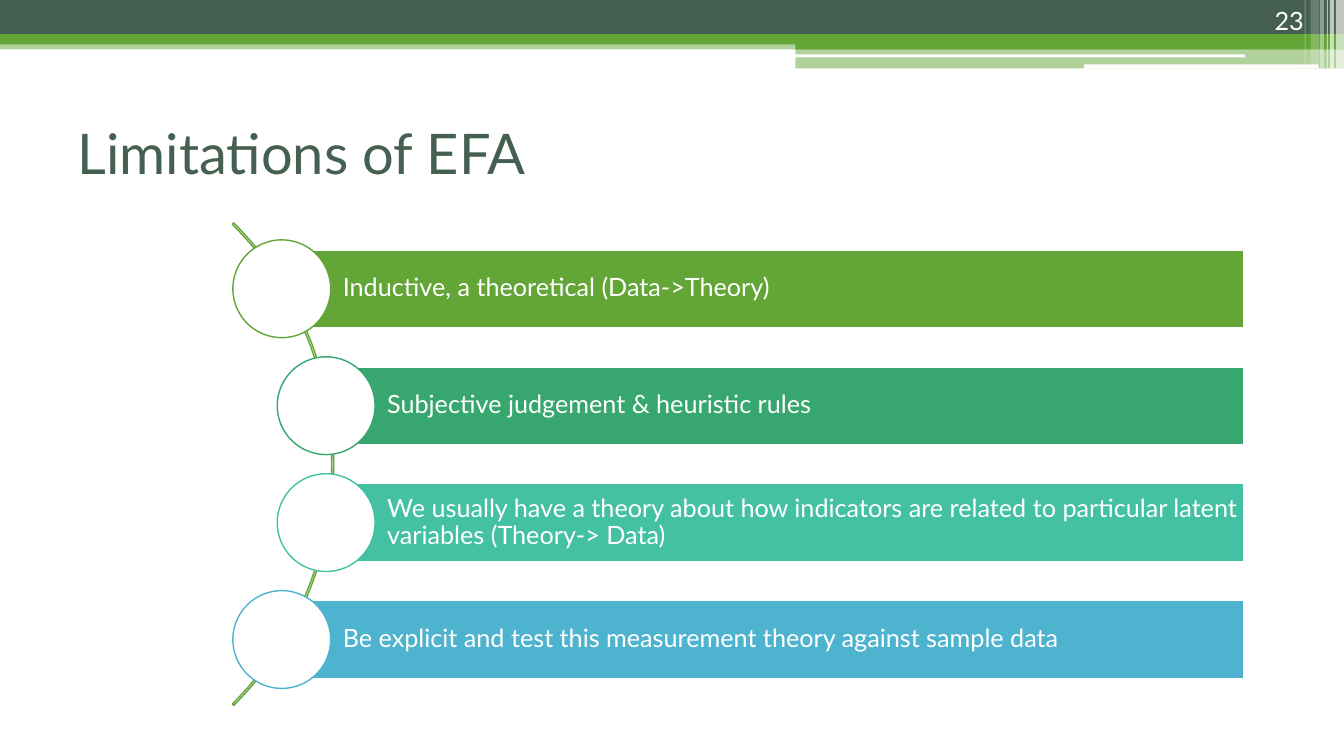
from pptx import Presentation
from pptx.dml.color import RGBColor
from pptx.enum.shapes import MSO_SHAPE
from pptx.enum.text import MSO_ANCHOR, MSO_AUTO_SIZE, PP_ALIGN
from pptx.oxml.ns import qn
from pptx.util import Emu, Pt
from lxml.etree import SubElement

PX = 9144
WHITE = RGBColor(0xFF, 0xFF, 0xFF)
DARK_GREEN = RGBColor(0x45, 0x5F, 0x51)
GREEN = RGBColor(0x63, 0xA5, 0x37)
EMERALD = RGBColor(0x37, 0xA7, 0x6F)
TEAL = RGBColor(0x44, 0xC1, 0xA3)
BLUE = RGBColor(0x4E, 0xB3, 0xCF)

HEADER_BANDS = [
    (0, 40, 1333, 9, GREEN, 50),
    (0, 0, 1333, 34, DARK_GREEN, 100),
    (0, 34, 1333, 10, GREEN, 100),
    (789, 39, 544, 10, GREEN, 100),
    (789, 48, 544, 20, GREEN, 50),
]
HEADER_GAPS = [(788, 54, 447, 3), (1075, 64, 233, 4)]
CORNER_STRIPES = [
    (1325, 8, 68, 65),
    (1319, 4, 68, 65),
    (1316, 1, 68, 60),
    (1309, 4, 68, 40),
    (1300, 8, 64, 20),
    (1294, 1, 64, 30),
]
LIMITATIONS = [
    (279, GREEN, "Inductive, a theoretical (Data->Theory)"),
    (323, EMERALD, "Subjective judgement & heuristic rules"),
    (323, TEAL, "We usually have a theory about how indicators are related "
                "to particular latent variables (Theory-> Data)"),
    (279, BLUE, "Be explicit and test this measurement theory against sample data"),
]
BAR_TOP, BAR_PITCH, BAR_HEIGHT, BAR_RIGHT = 248, 116, 77, 1234
CIRCLE_SIZE = 97


def write_text(frame, text, size=18, color=WHITE, align=PP_ALIGN.LEFT,
               anchor=MSO_ANCHOR.MIDDLE, line_spacing=None, insets=(10, 5, 10, 5)):
    frame.word_wrap = True
    frame.auto_size = MSO_AUTO_SIZE.NONE
    frame.vertical_anchor = anchor
    (frame.margin_left, frame.margin_top,
     frame.margin_right, frame.margin_bottom) = [Emu(inset * PX) for inset in insets]
    paragraph = frame.paragraphs[0]
    paragraph.alignment = align
    if line_spacing:
        paragraph.line_spacing = line_spacing
    run = paragraph.add_run()
    run.text = text
    run.font.name = "Lato"
    run.font.size = Pt(size)
    run.font.color.rgb = color


class SlideBuilder:
    """Draws styled elements on one slide, with lengths in px."""

    def __init__(self, presentation):
        self.slide = presentation.slides.add_slide(presentation.slide_layouts[5])

    def shape(self, kind, left, top, width, height, fill=None, line=None, opacity=100):
        shape = self.slide.shapes.add_shape(
            kind, *[Emu(length * PX) for length in (left, top, width, height)])
        shape.shadow.inherit = False
        if fill is None:
            shape.fill.background()
        else:
            shape.fill.solid()
            shape.fill.fore_color.rgb = fill
        if opacity < 100:
            color = shape.fill._xPr.find(qn("a:solidFill"))[0]
            SubElement(color, qn("a:alpha")).set("val", str(opacity * 1000))
        if line is None:
            shape.line.fill.background()
        else:
            shape.line.color.rgb = line
            shape.line.width = Pt(1)
        return shape

    def header(self):
        for left, top, width, height, color, opacity in HEADER_BANDS:
            self.shape(MSO_SHAPE.RECTANGLE, left, top, width, height, color, opacity=opacity)
        for gap in HEADER_GAPS:
            self.shape(MSO_SHAPE.ROUNDED_RECTANGLE, *gap, WHITE)
        for left, width, height, opacity in CORNER_STRIPES:
            self.shape(MSO_SHAPE.RECTANGLE, left, 0, width, height, WHITE, opacity=opacity)

    def title(self, text):
        title = self.slide.shapes.title
        title.left, title.top = Emu(67 * PX), Emu(92 * PX)
        title.width, title.height = Emu(1200 * PX), Emu(117 * PX)
        write_text(title.text_frame, text, size=40, color=DARK_GREEN)

    def page_number(self, text):
        box = self.slide.shapes.add_textbox(
            Emu(1192 * PX), Emu(0), Emu(111 * PX), Emu(40 * PX))
        write_text(box.text_frame, text, align=PP_ALIGN.RIGHT, anchor=MSO_ANCHOR.BOTTOM)

    def arc(self):
        arc = self.shape(MSO_SHAPE.BLOCK_ARC, -346, 122, 677, 677, line=GREEN)
        for index, value in enumerate((189, 27, 0.003)):
            arc.adjustments[index] = value

    def limitation(self, left, top, color, text):
        bar = self.shape(MSO_SHAPE.RECTANGLE, left, top, BAR_RIGHT - left, BAR_HEIGHT,
                         color, WHITE)
        write_text(bar.text_frame, text, line_spacing=0.9, insets=(61, 5, 5, 5))
        self.shape(MSO_SHAPE.OVAL, left - 48, top - 10, CIRCLE_SIZE, CIRCLE_SIZE,
                   WHITE, color)


def main():
    presentation = Presentation()
    presentation.slide_width, presentation.slide_height = Emu(1333 * PX), Emu(750 * PX)
    builder = SlideBuilder(presentation)
    builder.header()
    builder.title("Limitations of EFA")
    builder.page_number("23")
    builder.arc()
    for row, (left, color, text) in enumerate(LIMITATIONS):
        builder.limitation(left, BAR_TOP + row * BAR_PITCH, color, text)
    presentation.save("out.pptx")


if __name__ == "__main__":
    main()
